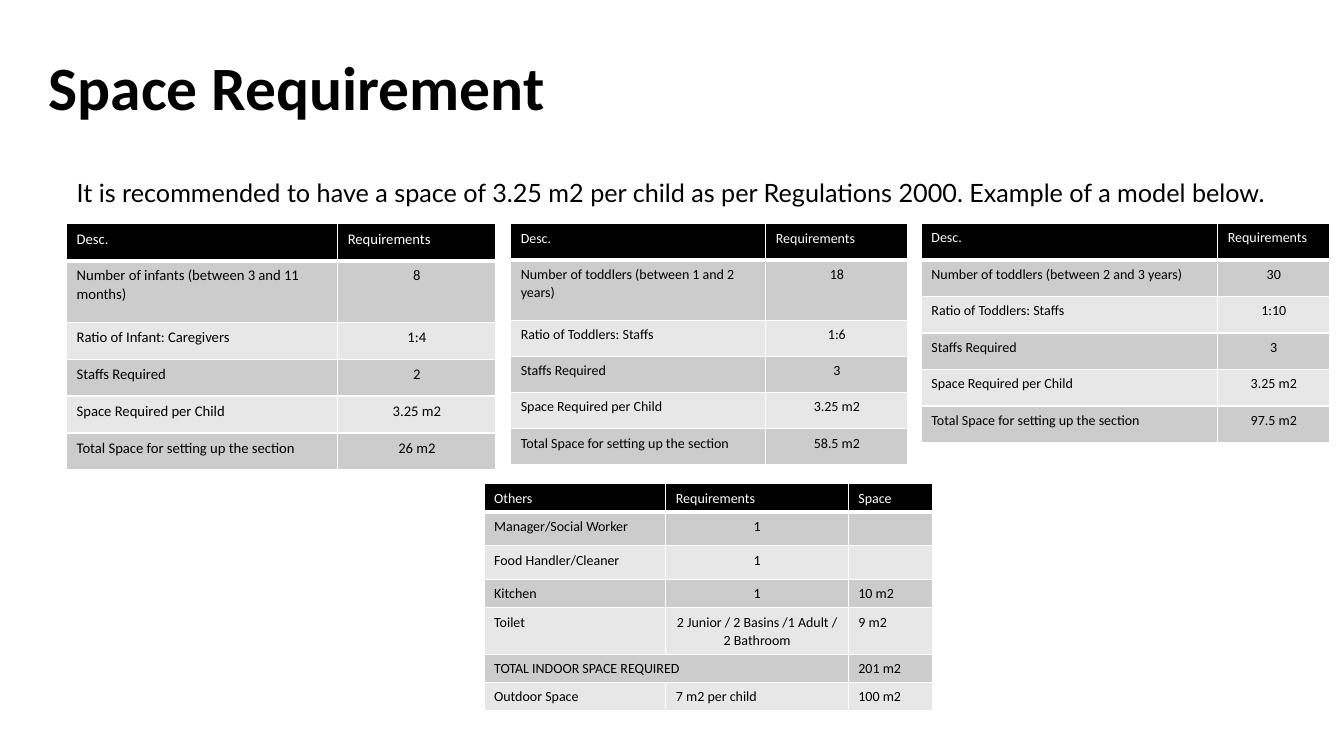
from lxml import etree
from pptx import Presentation
from pptx.dml.color import RGBColor
from pptx.enum.text import MSO_ANCHOR, MSO_AUTO_SIZE, PP_ALIGN
from pptx.oxml.ns import qn
from pptx.util import Cm, Pt

LEFT, CENTER = PP_ALIGN.LEFT, PP_ALIGN.CENTER
TOP, MIDDLE = MSO_ANCHOR.TOP, MSO_ANCHOR.MIDDLE
NO_AUTOFIT = MSO_AUTO_SIZE.NONE

BLACK = RGBColor(0x00, 0x00, 0x00)
WHITE = RGBColor(0xFF, 0xFF, 0xFF)
DARK_BAND = RGBColor(0xCC, 0xCC, 0xCC)
LIGHT_BAND = RGBColor(0xE7, 0xE7, 0xE7)


def apply(target, values):
    for name, value in values.items():
        setattr(target, name, value)


class SpaceSlide:
    """Holds the style and the current slide."""

    heading_font = "Calibri"
    body_font = "Lato"

    def __init__(self, presentation):
        self.slide = presentation.slides.add_slide(presentation.slide_layouts[1])

    def format_paragraph(self, paragraph, font, size, color, bold=False,
                         align=LEFT, spacing=1.07):
        apply(paragraph, {"alignment": align, "line_spacing": spacing,
                          "space_before": Pt(0), "space_after": Pt(0)})
        for run in paragraph.runs:
            apply(run.font, {"name": font, "size": Pt(size), "bold": bold})
            run.font.color.rgb = color

    def fill_placeholder(self, holder, text, box, anchor):
        for name, length in zip(("left", "top", "width", "height"), box):
            setattr(holder, name, Cm(length))
        apply(holder.text_frame, {"text": text, "word_wrap": True,
                                  "auto_size": NO_AUTOFIT, "vertical_anchor": anchor})
        return holder.text_frame.paragraphs[0]

    def title(self, text, box):
        paragraph = self.fill_placeholder(self.slide.shapes.title, text, box, MIDDLE)
        self.format_paragraph(paragraph, self.heading_font, 44, BLACK,
                              bold=True, spacing=0.9)

    def body(self, text, box):
        paragraph = self.fill_placeholder(self.slide.placeholders[1], text, box, TOP)
        properties = paragraph._p.get_or_add_pPr()
        properties.set("marL", "0")
        properties.set("indent", "0")
        etree.SubElement(properties, qn("a:buNone"))
        self.format_paragraph(paragraph, self.body_font, 18, BLACK, spacing=2)

    def border(self, cell, bottom):
        properties = cell._tc.get_or_add_tcPr()
        for side, width in (("L", 1), ("R", 1), ("T", 1), ("B", bottom)):
            line = etree.SubElement(properties, qn(f"a:ln{side}"), w=str(Pt(width)))
            solid = etree.SubElement(line, qn("a:solidFill"))
            etree.SubElement(solid, qn("a:srgbClr"), val=str(WHITE))

    def cell(self, cell, text, size, is_header, band, align):
        self.border(cell, 3 if is_header else 1)
        cell.fill.solid()
        cell.fill.fore_color.rgb = BLACK if is_header else band
        cell.text = text
        paragraph = cell.text_frame.paragraphs[0]
        self.format_paragraph(paragraph, self.heading_font, size,
                              WHITE if is_header else BLACK, align=align)
        if not text:
            # Keeps an empty cell from stretching its row
            etree.SubElement(paragraph._p, qn("a:endParaRPr"), sz=str(size * 100))

    def table(self, rows, left, top, widths, heights, size=10, centered_rows=5):
        """Rows 1 to centered_rows have their second column centred."""
        frame = self.slide.shapes.add_table(
            len(rows), len(widths), Cm(left), Cm(top),
            Cm(sum(widths)), Cm(sum(heights)))
        table = frame.table
        apply(table, {"first_row": False, "horz_banding": False})
        for column, width in zip(table.columns, widths):
            column.width = Cm(width)
        for row, height in zip(table.rows, heights):
            row.height = Cm(height)
        for r, texts in enumerate(rows):
            band = DARK_BAND if r % 2 else LIGHT_BAND
            for c, text in enumerate(texts):
                centered = c == 1 and 1 <= r <= centered_rows
                self.cell(table.cell(r, c), text, size, r == 0, band,
                          CENTER if centered else LEFT)
        return table


def section_rows(group, count, ratio_label, ratio, staffs, total):
    return [
        ("Desc.", "Requirements"),
        (f"Number of {group}", count),
        (ratio_label, ratio),
        ("Staffs Required", staffs),
        ("Space Required per Child", "3.25 m2"),
        ("Total Space for setting up the section", total),
    ]


def main():
    presentation = Presentation()
    apply(presentation, {"slide_width": Cm(33.87), "slide_height": Cm(19.05)})
    page = SpaceSlide(presentation)

    # Heading and recommendation
    page.title("Space Requirement", (0.97, 1.24, 31.22, 2.08))
    page.body("It is recommended to have a space of 3.25 m2 per child as per "
              "Regulations 2000. Example of a model below.",
              (1.68, 3.58, 30.5, 10.8))

    # One table per age group
    toddler_ratio = "Ratio of Toddlers: Staffs"
    infants = section_rows("infants (between 3 and 11 months)", "8",
                           "Ratio of Infant: Caregivers", "1:4", "2", "26 m2")
    young_toddlers = section_rows("toddlers (between 1 and 2 years)", "18",
                                  toddler_ratio, "1:6", "3", "58.5 m2")
    older_toddlers = section_rows("toddlers (between 2 and 3 years)", "30",
                                  toddler_ratio, "1:10", "3", "97.5 m2")
    page.table(infants, 1.68, 5.64, (6.83, 3.99),
               [0.93, 1.55] + [0.93] * 4, size=10.5)
    page.table(young_toddlers, 12.87, 5.64, (6.43, 3.58), [0.91, 1.52] + [0.91] * 4)
    page.table(older_toddlers, 23.22, 5.63, (7.47, 2.82), [0.92] * 6)

    # Shared rooms and totals
    others = [
        ("Others", "Requirements", "Space"),
        ("Manager/Social Worker", "1", ""),
        ("Food Handler/Cleaner", "1", ""),
        ("Kitchen", "1", "10 m2"),
        ("Toilet", "2 Junior / 2 Basins /1 Adult / 2 Bathroom", "9 m2"),
        ("TOTAL INDOOR SPACE REQUIRED", "", "201 m2"),
        ("Outdoor Space", "7 m2 per child", "100 m2"),
    ]
    shared = page.table(others, 12.2, 12.19, (4.58, 4.6, 2.13),
                        (0.71, 0.85, 0.85, 0.71, 1.17, 0.71, 0.71), centered_rows=4)
    shared.cell(5, 0).merge(shared.cell(5, 1))

    presentation.save("out.pptx")


if __name__ == "__main__":
    main()
